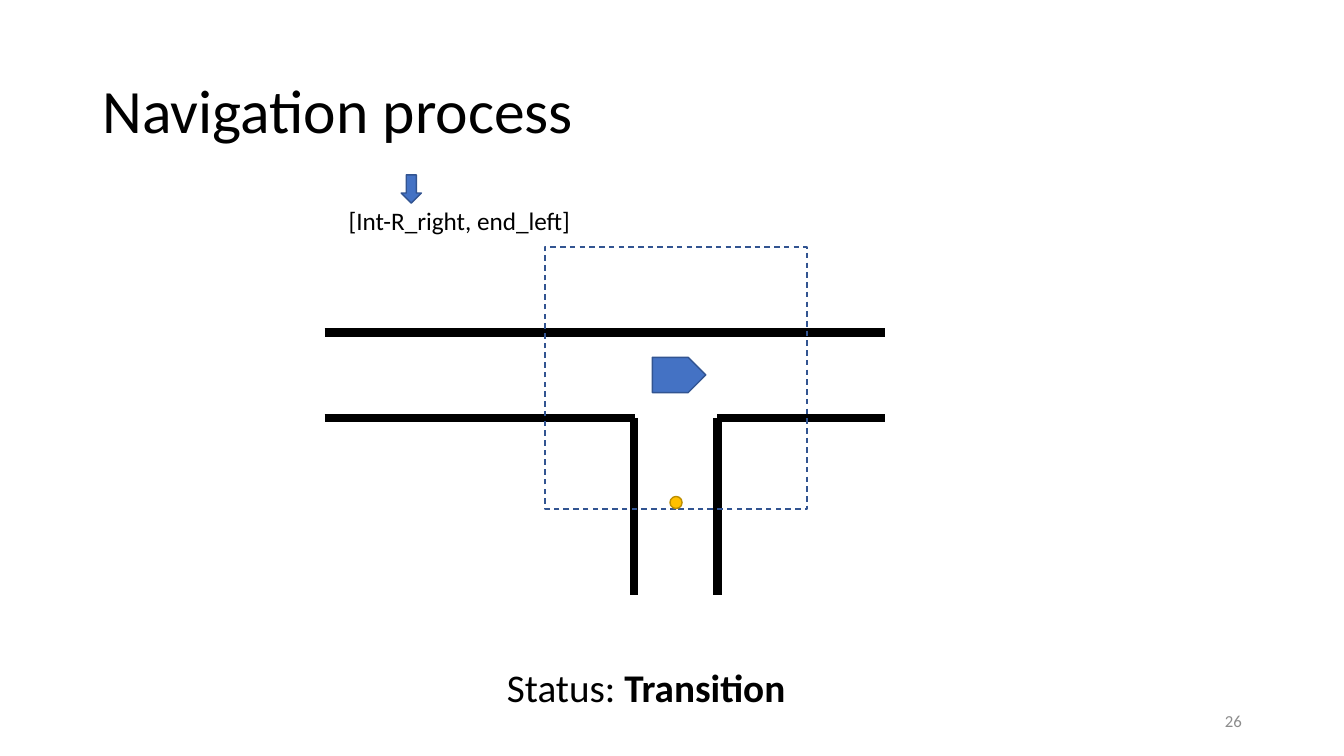
from lxml import etree
from pptx import Presentation, util as u
from pptx.dml.color import RGBColor
from pptx.enum import dml, shapes, text
from pptx.oxml.ns import qn

BLACK = RGBColor(0x00, 0x00, 0x00)
GREY = RGBColor(0x8C, 0x8C, 0x8C)
BLUE = RGBColor(0x44, 0x72, 0xC4)
DARK_BLUE = RGBColor(0x32, 0x54, 0x91)
GOLD = RGBColor(0xFF, 0xC0, 0x00)
DARK_GOLD = RGBColor(0xBD, 0x8E, 0x00)

presentation = Presentation()
presentation.slide_width = u.Inches(13.33)
presentation.slide_height = u.Inches(7.5)
slide = presentation.slides.add_slide(presentation.slide_layouts[6])


def grid(*cells):
    """Turn counts of grid cells, a tenth of an inch each, into lengths."""
    return [u.Inches(cell / 10) for cell in cells]


def add_text(box, runs, size, color=BLACK, wrap=False,
             anchor=text.MSO_ANCHOR.TOP, align=text.PP_ALIGN.LEFT):
    """Add a one-paragraph text box; runs are (wording, bold) pairs."""
    frame = slide.shapes.add_textbox(*grid(*box)).text_frame
    frame.word_wrap = wrap
    frame.vertical_anchor = anchor
    if not wrap:
        frame.auto_size = text.MSO_AUTO_SIZE.SHAPE_TO_FIT_TEXT
    paragraph = frame.paragraphs[0]
    paragraph.alignment = align
    for wording, bold in runs:
        run = paragraph.add_run()
        run.text = wording
        run.font.name = "Calibri"
        run.font.size = u.Pt(size)
        run.font.bold = bold
        run.font.color.rgb = color
    return paragraph


# Title and slide number
title = add_text((9.2, 4, 115, 14.5), [("Navigation process", False)], 44,
                 wrap=True, anchor=text.MSO_ANCHOR.MIDDLE)
title.line_spacing = 0.9
add_text((94.15, 69.5, 30, 4), [("26", False)], 12, GREY, wrap=True,
         anchor=text.MSO_ANCHOR.MIDDLE, align=text.PP_ALIGN.RIGHT)

# Road walls of the T-junction
road_left, road_right = 32.2, 87.8
road_top, road_bottom, branch_end = 33, 41.45, 59
branch_left, branch_right = 62.9, 71.15
walls = [
    (road_left, road_top, road_right, road_top),
    (road_left, road_bottom, branch_left + 0.1, road_bottom),
    (branch_right, road_bottom, road_right, road_bottom),
    (branch_left, road_bottom, branch_left, branch_end),
    (branch_right, road_bottom, branch_right, branch_end),
]
for wall in walls:
    connector = slide.shapes.add_connector(shapes.MSO_CONNECTOR.STRAIGHT, *grid(*wall))
    connector.line.color.rgb = BLACK
    connector.line.width = u.Pt(6)
    etree.SubElement(connector._element.spPr, qn("a:effectLst"))

add_text((33.6, 19.9, 24.4, 4), [("[Int-R_right, end_left]", False)], 18)

# Step arrow, vehicle, sensing window and target point
kinds = shapes.MSO_SHAPE
markers = [
    (kinds.DOWN_ARROW, (39.8, 17.35, 2, 2.8), BLUE, DARK_BLUE),
    (kinds.SNIP_2_SAME_RECTANGLE, (65.6, 34.55, 3.5, 5.3), BLUE, DARK_BLUE),
    (kinds.RECTANGLE, (54.05, 24.5, 26, 26), None, DARK_BLUE),
    (kinds.OVAL, (66.45, 49.25, 1.2, 1.2), GOLD, DARK_GOLD),
]
for kind, box, fill, outline in markers:
    shape = slide.shapes.add_shape(kind, *grid(*box))
    shape.shadow.inherit = False
    shape.line.color.rgb = outline
    shape.line.width = u.Pt(1)
    if fill is None:
        shape.fill.background()
        shape.line.dash_style = dml.MSO_LINE.DASH
    else:
        shape.fill.solid()
        shape.fill.fore_color.rgb = fill
    if kind == kinds.SNIP_2_SAME_RECTANGLE:
        shape.rotation = 90
        shape.adjustments[0] = 0.5
        shape.adjustments[1] = 0

add_text((49.3, 65.3, 30, 5.7), [("Status: ", False), ("Transition", True)], 28)

presentation.save("out.pptx")
